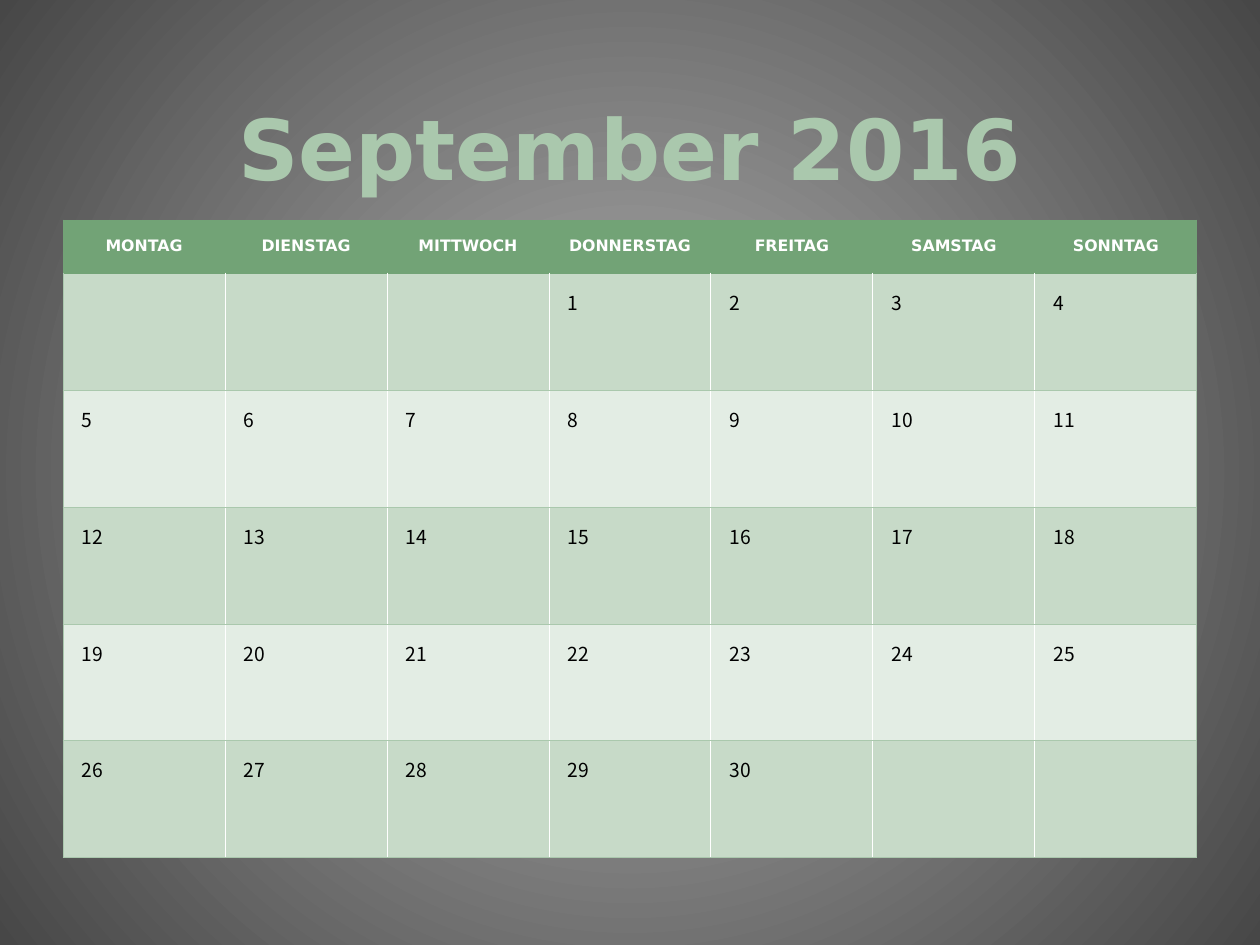
from lxml import etree
from pptx import Presentation
from pptx import util as u
from pptx.dml.color import RGBColor
from pptx.enum import text
from pptx.oxml.ns import qn

PX = 914400 // 126
COLORS = {
    "glow": "B1B1B1", "edge": "474747", "title": "AAC8AD", "header": "72A376",
    "odd_week": "C7DAC8", "even_week": "E3EDE4", "rule": "AAC8AD",
    "white": "FFFFFF", "ink": "000000",
}
WEEKDAYS = ["MONTAG", "DIENSTAG", "MITTWOCH", "DONNERSTAG", "FREITAG", "SAMSTAG", "SONNTAG"]
WEEKS = 5
FIRST_COLUMN = 3
DAYS_IN_MONTH = 30
HEADING_FONT = "DejaVu Sans"
DAY_FONT = "Noto Sans CJK SC"
LEFT, WIDTH = 63, 1134
HEADER_HEIGHT, WEEK_HEIGHT = 53, 117


def px(length):
    return u.Emu(length * PX)


def rgb(name):
    return RGBColor.from_string(COLORS[name])


def style_paragraph(paragraph, font_name, size, color, bold=False, align=text.PP_ALIGN.LEFT):
    paragraph.alignment = align
    for run in paragraph.runs:
        run.font.name = font_name
        run.font.size = u.Pt(size)
        run.font.bold = bold
        run.font.color.rgb = rgb(color)


def set_background(slide):
    """Fill the slide with a gradient that darkens outwards from the centre."""
    fill = slide.background.fill
    fill.gradient()
    for stop, color, position in zip(fill.gradient_stops, ("glow", "edge"), (0, 1)):
        stop.color.rgb = rgb(color)
        stop.position = position
    linear = next(slide.element.iter(qn("a:lin")))
    circle = etree.Element(qn("a:path"), path="circle")
    etree.SubElement(circle, qn("a:fillToRect"), l="50000", t="50000", r="50000", b="50000")
    linear.getparent().replace(linear, circle)


def add_title(slide, title):
    box = slide.shapes.add_textbox(px(LEFT), px(42), px(WIDTH), px(157))
    frame = box.text_frame
    frame.word_wrap = True
    frame.vertical_anchor = text.MSO_ANCHOR.BOTTOM
    frame.margin_bottom = px(2)
    frame.text = title
    style_paragraph(frame.paragraphs[0], HEADING_FONT, 48, "title", True, text.PP_ALIGN.CENTER)


def set_borders(cell, left, right, top, bottom):
    """Draw the four sides in the named colours; None leaves a side open."""
    properties = cell._tc.get_or_add_tcPr()
    for side, color in zip("LRTB", (left, right, top, bottom)):
        line = etree.SubElement(properties, qn(f"a:ln{side}"), w=str(u.Pt(0.5)))
        if color is None:
            etree.SubElement(line, qn("a:noFill"))
        else:
            solid = etree.SubElement(line, qn("a:solidFill"))
            etree.SubElement(solid, qn("a:srgbClr"), val=COLORS[color])


def fill_cell(cell, color):
    cell.fill.solid()
    cell.fill.fore_color.rgb = rgb(color)


def format_header(cell, column, weekday):
    set_borders(
        cell,
        "header" if column == 0 else None,
        "header" if column == len(WEEKDAYS) - 1 else None,
        "header", "header",
    )
    fill_cell(cell, "header")
    cell.vertical_anchor = text.MSO_ANCHOR.MIDDLE
    cell.text_frame.text = weekday
    style_paragraph(cell.text_frame.paragraphs[0], HEADING_FONT, 9, "white", True,
                    text.PP_ALIGN.CENTER)


def format_day(cell, week, column):
    set_borders(
        cell,
        "rule" if column == 0 else "white",
        "rule" if column == len(WEEKDAYS) - 1 else "white",
        "header" if week == 0 else "rule", "rule",
    )
    fill_cell(cell, "even_week" if week % 2 else "odd_week")
    day = week * len(WEEKDAYS) + column - FIRST_COLUMN + 1
    if 1 <= day <= DAYS_IN_MONTH:
        cell.text_frame.text = str(day)
        paragraph = cell.text_frame.paragraphs[0]
        paragraph.line_spacing = 1.3
        style_paragraph(paragraph, DAY_FONT, 11, "ink")
        properties = paragraph._p.get_or_add_pPr()
        properties.set("marL", str(u.Inches(0.05)))
        properties.set("indent", "0")


def add_calendar(slide):
    height = HEADER_HEIGHT + WEEKS * WEEK_HEIGHT
    table = slide.shapes.add_table(
        WEEKS + 1, len(WEEKDAYS), px(LEFT), px(220), px(WIDTH), px(height)
    ).table
    table.horz_banding = False
    table.first_row = False
    for row_index, row in enumerate(table.rows):
        row.height = px(WEEK_HEIGHT if row_index else HEADER_HEIGHT)
    for column, weekday in enumerate(WEEKDAYS):
        table.columns[column].width = px(WIDTH // len(WEEKDAYS))
        format_header(table.cell(0, column), column, weekday)
        for week in range(WEEKS):
            format_day(table.cell(week + 1, column), week, column)


def main():
    presentation = Presentation()
    presentation.slide_width = u.Inches(10)
    presentation.slide_height = u.Inches(7.5)
    slide = presentation.slides.add_slide(presentation.slide_layouts[6])
    set_background(slide)
    add_title(slide, "September 2016")
    add_calendar(slide)
    presentation.save("out.pptx")


if __name__ == "__main__":
    main()
